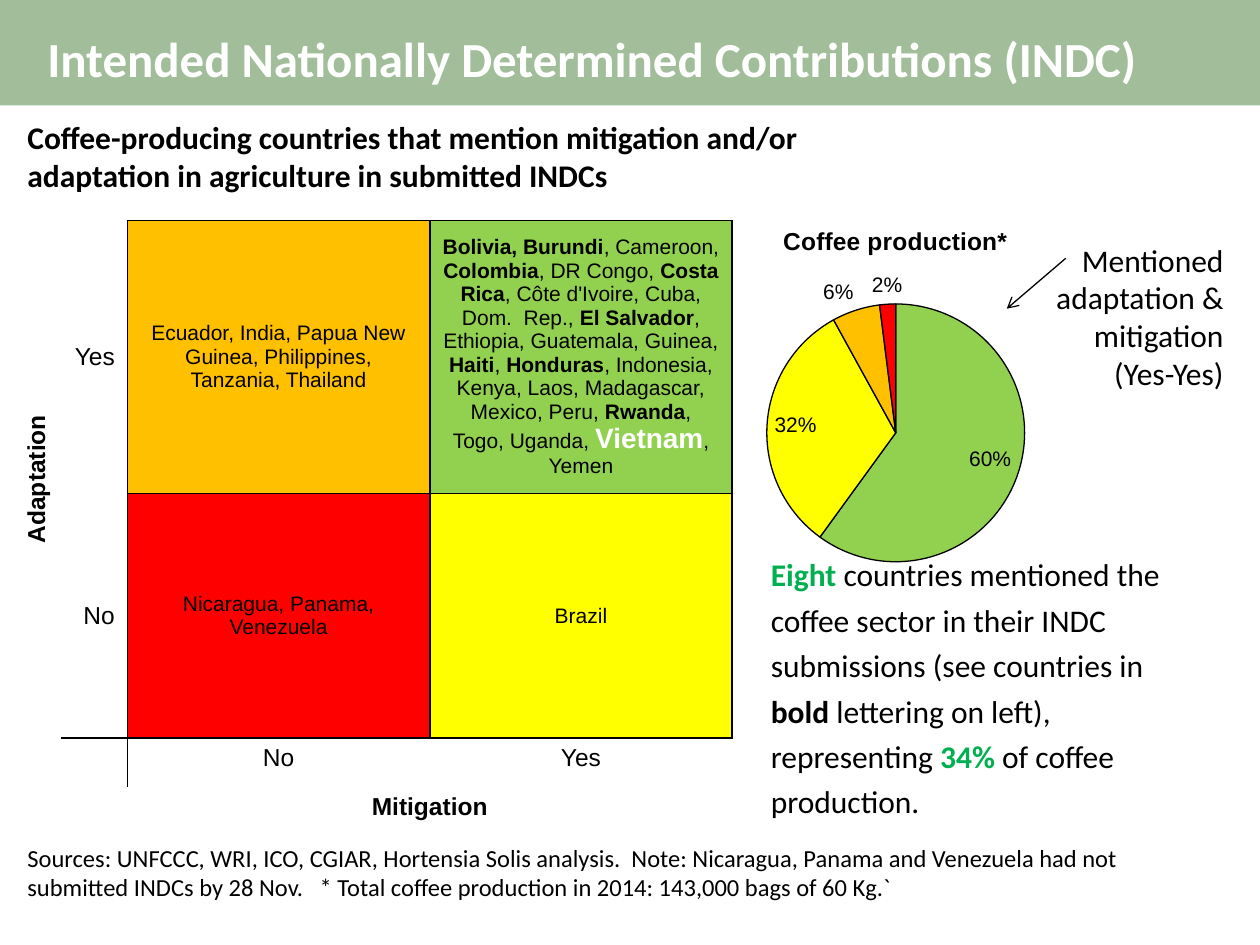
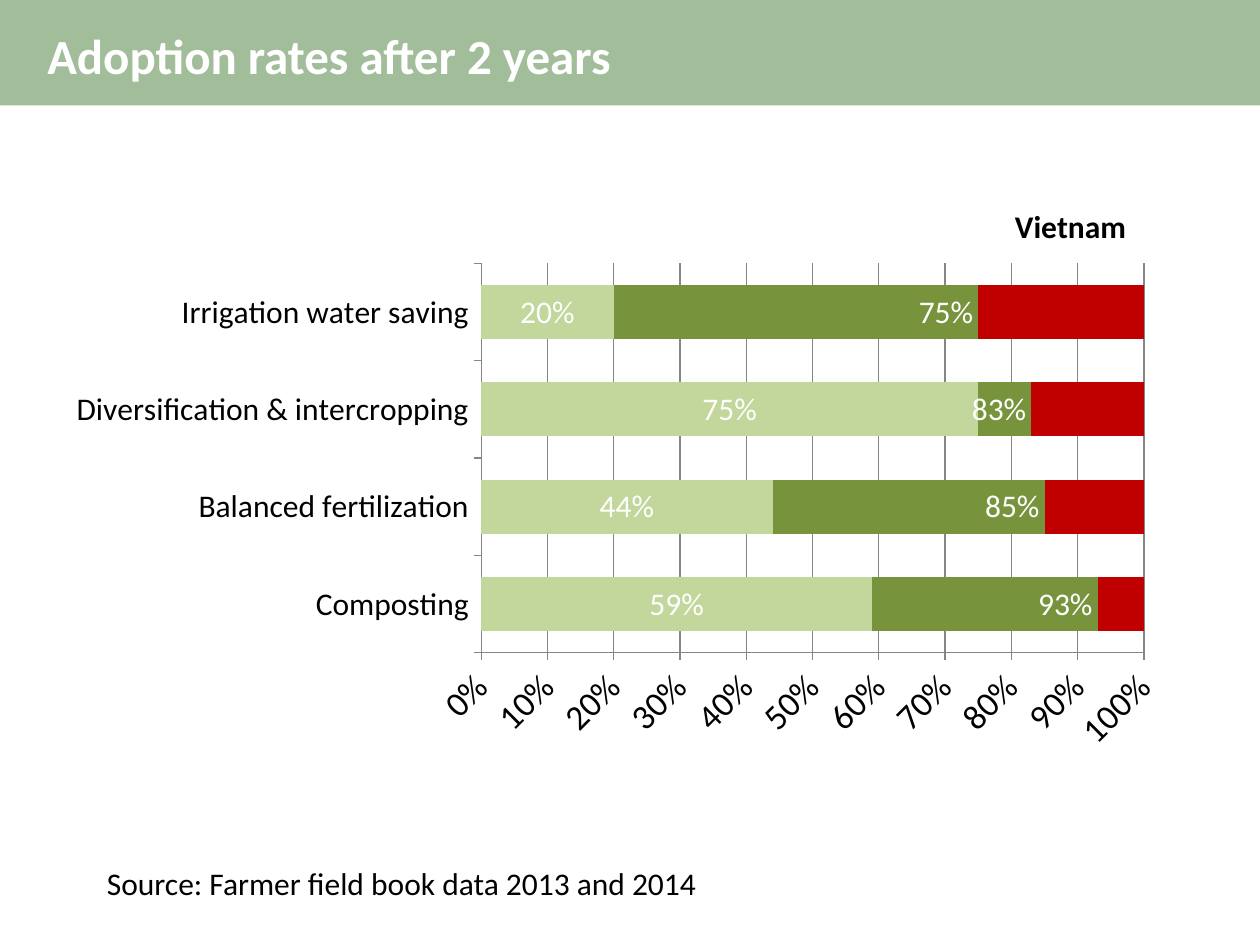
from lxml import etree
from pptx import Presentation
from pptx.chart.data import CategoryChartData
from pptx.dml.color import RGBColor
from pptx.enum.chart import XL_CHART_TYPE as KIND, XL_LABEL_POSITION as POS, XL_TICK_MARK as TICK
from pptx.enum.shapes import MSO_CONNECTOR as LINE, MSO_SHAPE as SHAPE
from pptx.enum.text import MSO_ANCHOR as ANCHOR, PP_ALIGN as ALIGN
from pptx.oxml.ns import qn
from pptx.util import Pt

BLACK = RGBColor(0x00, 0x00, 0x00)
WHITE = RGBColor(0xFF, 0xFF, 0xFF)
SAGE = RGBColor(0xA2, 0xBD, 0x99)
GREEN = RGBColor(0x00, 0xB0, 0x50)
LIME = RGBColor(0x92, 0xD0, 0x50)
YELLOW = RGBColor(0xFF, 0xFF, 0x00)
AMBER = RGBColor(0xFF, 0xC0, 0x00)
RED = RGBColor(0xFF, 0x00, 0x00)
BRICK = RGBColor(0xC0, 0x00, 0x00)
OLIVE = RGBColor(0x77, 0x93, 0x3C)
PALE = RGBColor(0xC3, 0xD6, 0x9B)
GREY = RGBColor(0x86, 0x86, 0x86)

SANS, ARIAL = "Calibri", "Arial"
WIDE, HIGH, BAND = 720, 540, 60.3
PLAIN = "{2D5ABB26-0587-4C30-8999-92F81FD0307C}"  # table style without grid

BOTH = ("|Bolivia, Burundi|, Cameroon, |Colombia|, DR Congo, |Costa Rica|, "
        "Côte d'Ivoire, Cuba, Dom.  Rep., |El Salvador|, Ethiopia, Guatemala, "
        "Guinea, |Haiti|, |Honduras|, Indonesia, Kenya, Laos, Madagascar, "
        "Mexico, Peru, |Rwanda|, Togo, Uganda, |Vietnam|, Yemen")


def style(font, size, color=BLACK, bold=False, name=SANS):
    font.name, font.size, font.bold = name, Pt(size), bold
    font.color.rgb = color


def write(frame, text, size, color=BLACK, bold=False, name=SANS,
          align=ALIGN.LEFT, space=None, marks=None):
    """Fill a frame; |bars| enclose bold runs, marks maps a run to (size, color)."""
    for i, line in enumerate(text.split("\n")):
        para = frame.paragraphs[0] if i == 0 else frame.add_paragraph()
        para.alignment = align
        if space:
            para.line_spacing = space
        style(para.font, size, color, bold, name)
        parts = line.split("|")
        for j, part in enumerate(parts):
            if not part:
                continue
            run = para.add_run()
            run.text = part
            if len(parts) > 1:
                run.font.bold = j % 2 == 1
            if marks and part in marks:
                big, tint = marks[part]
                run.font.size = Pt(big)
                run.font.color.rgb = tint


def place(node, x, y, w=None, h=None):
    """Pin a chart part, in fractions of the chart; a size means the inner plot."""
    old = node.find(qn("c:layout"))
    if old is not None:
        node.remove(old)
    layout = etree.Element(qn("c:layout"))
    box = etree.SubElement(layout, qn("c:manualLayout"))
    pairs = [("xMode", "edge"), ("yMode", "edge"), ("x", x), ("y", y)]
    if w:
        pairs = [("layoutTarget", "inner")] + pairs + [("w", w), ("h", h)]
    for tag, val in pairs:
        etree.SubElement(box, qn("c:" + tag)).set("val", str(val))
    text = node.find(qn("c:tx"))
    node.insert(0 if text is None else 1, layout)


def edge(cell, sides):
    """Draw the lines named by the letters L, R, T and B around a cell."""
    props = cell._tc.get_or_add_tcPr()
    for side in "LRTB":
        line = etree.SubElement(props, qn("a:ln" + side), w=str(Pt(1)))
        if side in sides:
            fill = etree.SubElement(line, qn("a:solidFill"))
            etree.SubElement(fill, qn("a:srgbClr"), val=str(BLACK))
        else:
            etree.SubElement(line, qn("a:noFill"))


class Deck:
    def __init__(self):
        self.show = Presentation()
        self.show.slide_width, self.show.slide_height = Pt(WIDE), Pt(HIGH)

    def page(self, title, mid):
        """Start a slide with the band and a title centred at height mid."""
        self.shapes = self.show.slides.add_slide(self.show.slide_layouts[6]).shapes
        band = self.shapes.add_shape(SHAPE.RECTANGLE, 0, 0, Pt(WIDE), Pt(BAND))
        band.shadow.inherit = False
        band.fill.solid()
        band.fill.fore_color.rgb = SAGE
        band.line.fill.background()
        self.text(title, 20, mid - 20, 648, 40, 28, color=WHITE, bold=True,
                  anchor=ANCHOR.MIDDLE)

    def text(self, text, x, y, w, h, size, anchor=ANCHOR.TOP, **look):
        frame = self.shapes.add_textbox(Pt(x), Pt(y), Pt(w), Pt(h)).text_frame
        frame.word_wrap = True
        frame.vertical_anchor = anchor
        write(frame, text, size, **look)

    def arrow(self, x1, y1, x2, y2):
        line = self.shapes.add_connector(LINE.STRAIGHT, Pt(x1), Pt(y1), Pt(x2), Pt(y2))
        line.line.color.rgb = BLACK
        line.line.width = Pt(0.75)
        props = line._element.spPr
        etree.SubElement(props.find(qn("a:ln")), qn("a:tailEnd"), type="arrow")
        etree.SubElement(props, qn("a:effectLst"))

    def table(self, x, y, cols, rows, sides):
        """Add a bare table with lines by cell, and return it."""
        table = self.shapes.add_table(len(rows), len(cols), Pt(x), Pt(y),
                                      Pt(sum(cols)), Pt(sum(rows))).table
        table._tbl.tblPr.find(qn("a:tableStyleId")).text = PLAIN
        table.first_row = table.horz_banding = False
        for col, w in zip(table.columns, cols):
            col.width = Pt(w)
        for i, (row, h) in enumerate(zip(table.rows, rows)):
            row.height = Pt(h)
            for cell, side in zip(row.cells, sides[i]):
                edge(cell, side)
                cell.fill.background()
                cell.text_frame.paragraphs[0].font.size = Pt(14)
        return table

    def chart(self, kind, x, y, w, h, cats, rows, title, size, name, spot, plot):
        data = CategoryChartData()
        data.categories = cats
        for i, vals in enumerate(rows, 1):
            data.add_series(f"Series {i}", vals)
        chart = self.shapes.add_chart(kind, Pt(x), Pt(y), Pt(w), Pt(h), data).chart
        chart.has_legend = False
        style(chart.font, 12, name=name)
        head = chart.chart_title
        write(head.text_frame, title, size, bold=True, name=name, align=ALIGN.CENTER)
        head.include_in_layout = False
        place(head._element, *spot)
        place(chart._chartSpace.chart.plotArea, *plot)
        return chart


def matrix(deck):
    table = deck.table(9.4, 126, (25.2, 38.2, 172.8, 172.8), (139.7, 139.7, 28.1, 50.4),
                       (("", "R", "LRTB", "LRTB"), ("", "RB", "LRTB", "LRTB"),
                        ("", "TR", "LT", "T"), ("", "", "", "")))
    table.cell(0, 0).merge(table.cell(1, 0))
    table.cell(3, 2).merge(table.cell(3, 3))
    mid, top = ANCHOR.MIDDLE, ANCHOR.TOP
    fields = (
        (0, 0, "Adaptation", 14, True, ANCHOR.BOTTOM, None),
        (0, 1, "Yes", 14, False, mid, None),
        (1, 1, "No", 14, False, mid, None),
        (0, 2, "Ecuador, India, Papua New Guinea, Philippines, Tanzania, Thailand",
         12, False, mid, AMBER),
        (0, 3, BOTH, 12, False, mid, LIME),
        (1, 2, "Nicaragua, Panama, Venezuela", 12, False, mid, RED),
        (1, 3, "Brazil", 12, False, mid, YELLOW),
        (2, 2, "No", 14, False, top, None),
        (2, 3, "Yes", 14, False, top, None),
        (3, 2, "Mitigation", 14, True, top, None),
    )
    for row, col, text, size, bold, anchor, fill in fields:
        cell = table.cell(row, col)
        cell.vertical_anchor = anchor
        write(cell.text_frame, text, size, bold=bold, name=ARIAL,
              align=ALIGN.RIGHT if col == 1 else ALIGN.CENTER,
              marks={"Vietnam": (16, WHITE)})
        if fill is not None:
            cell.fill.solid()
            cell.fill.fore_color.rgb = fill
    table.cell(0, 0)._tc.tcPr.set("vert", "vert270")


def pie(deck):
    chart = deck.chart(KIND.PIE, 399.6, 115.2, 226.8, 216.7, "1234", [(60, 32, 6, 2)],
                       "Coffee production*", 14, ARIAL, (0.2, 0.05),
                       (0.17, 0.27, 0.65, 0.68))
    chart.plots[0].vary_by_categories = False
    series = chart.plots[0].series[0]
    for i, color in enumerate((LIME, YELLOW, AMBER, RED)):
        point = series.points[i]
        point.format.fill.solid()
        point.format.fill.fore_color.rgb = color
        point.format.line.color.rgb = BLACK
        point.format.line.width = Pt(0.75)
        point.data_label.position = POS.INSIDE_END if i < 2 else POS.OUTSIDE_END
    for label in series._element.iter(qn("c:dLbl")):
        label.find(qn("c:showVal")).set("val", "0")
        label.find(qn("c:showPercent")).set("val", "1")


def bars(deck):
    cats = ("Composting", "Balanced fertilization", "Diversification & intercropping",
            "Irrigation water saving")
    rows = ((1, 1, 1, 1), (0.93, 0.85, 0.83, 0.75), (0.59, 0.44, 0.75, 0.2))
    chart = deck.chart(KIND.BAR_CLUSTERED, 31, 100, 642, 337, cats, rows, "Vietnam", 18,
                       SANS, (0.85, 0.04), (0.38, 0.15, 0.59, 0.66))
    plot = chart.plots[0]
    plot.gap_width, plot.overlap = 80, 100
    plot.vary_by_categories = False
    for series, color, pos in zip(plot.series, (BRICK, OLIVE, PALE),
                                  (None, POS.INSIDE_END, POS.CENTER)):
        series.format.fill.solid()
        series.format.fill.fore_color.rgb = color
        if pos is not None:
            labels = series.data_labels
            labels.show_value = True
            labels.number_format, labels.number_format_is_linked = "0%", False
            labels.position = pos
            style(labels.font, 18, WHITE)
    for axis, size in ((chart.category_axis, 18), (chart.value_axis, 20)):
        axis.major_tick_mark = TICK.OUTSIDE
        axis.format.line.color.rgb = GREY
        style(axis.tick_labels.font, size)
    scale = chart.value_axis
    scale.minimum_scale, scale.maximum_scale, scale.major_unit = 0, 1, 0.1
    scale.major_gridlines.format.line.color.rgb = GREY
    scale.tick_labels.number_format = "0%"
    scale.tick_labels.number_format_is_linked = False
    body = scale._element.find(qn("c:txPr")).find(qn("a:bodyPr"))
    body.set("rot", str(-45 * 60000))


def main():
    deck = Deck()
    deck.page("Intended Nationally Determined Contributions (INDC)", 33)
    deck.text("Mentioned adaptation & mitigation\n(Yes-Yes)", 564.5, 134, 141.8, 94, 18,
              align=ALIGN.RIGHT)
    matrix(deck)
    deck.text("Sources: UNFCCC, WRI, ICO, CGIAR, Hortensia Solis analysis.  Note: Nicaragua, "
              "Panama and Venezuela had not submitted INDCs by 28 Nov.   * Total coffee "
              "production in 2014: 143,000 bags of 60 Kg.`", 8.6, 478, 653, 40, 14)
    pie(deck)
    deck.text("Coffee-producing countries that mention mitigation and/or adaptation in "
              "agriculture in submitted INDCs", 8.6, 64, 487.4, 51, 18, bold=True)
    deck.text("|Eight| countries mentioned the\ncoffee sector in their INDC submissions (see "
              "countries in |bold| lettering on left), representing |34%| of coffee "
              "production.", 433.4, 309.6, 260.6, 164, 18, space=1.2,
              marks={"Eight": (18, GREEN), "34%": (18, GREEN)})
    deck.arrow(609, 147.6, 575.3, 176.4)

    deck.page("Adoption rates after 2 years", 31.3)
    bars(deck)
    deck.text("Source: Farmer field book data 2013 and 2014", 54, 490.3, 481, 29, 18)
    deck.show.save("out.pptx")


if __name__ == "__main__":
    main()
